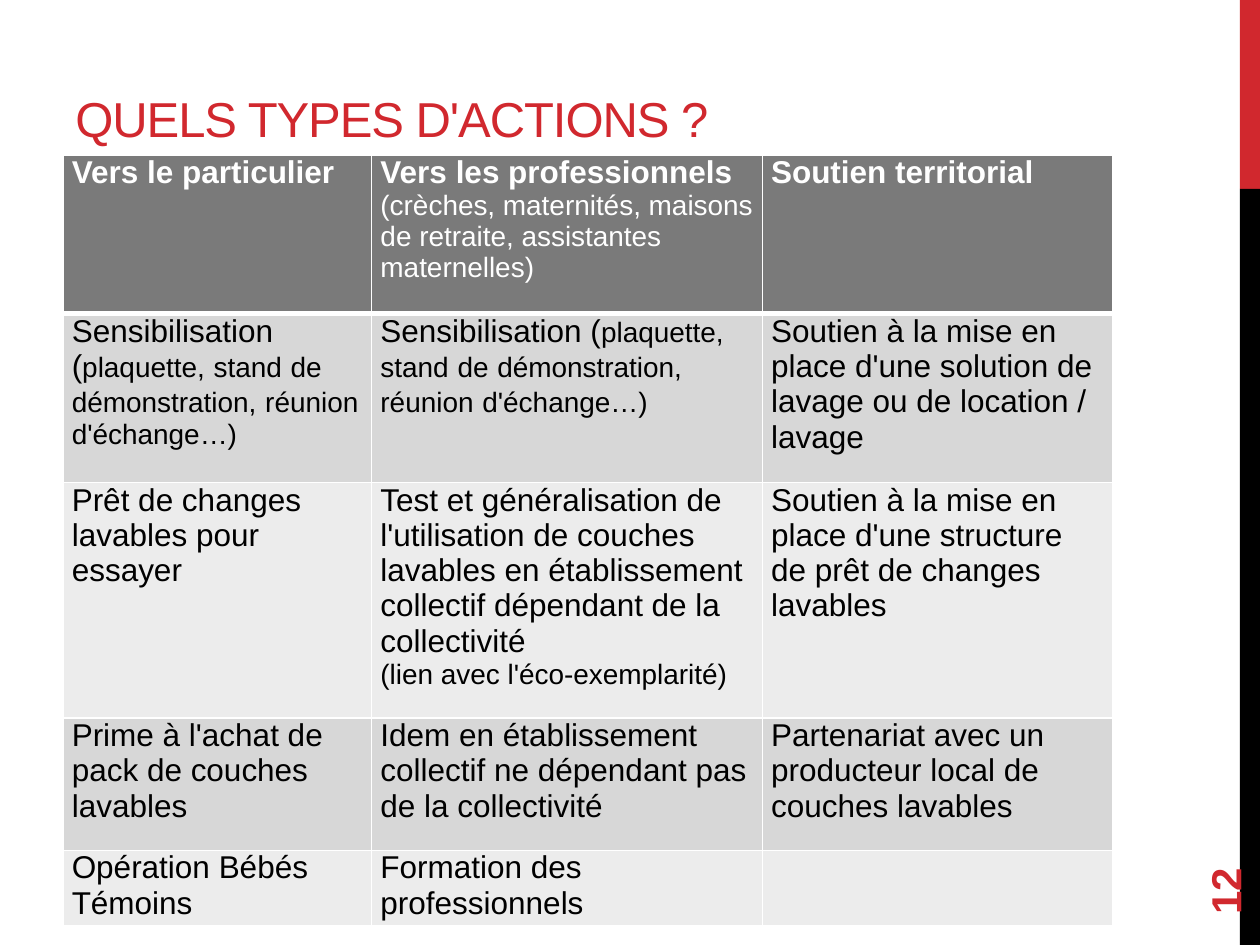
import pptx
import pptx.dml.color
import pptx.enum.shapes
import pptx.enum.text
import pptx.oxml.ns
import pptx.util
from lxml import etree
from pptx.util import Inches

COLORS = {
    "red": "D1282E", "black": "000000", "white": "FFFFFF",
    "header": "7A7A7A", "dark_band": "D7D7D7", "light_band": "ECECEC",
}
FONT = "Arial"
COLUMNS = [2.45, 3.1, 2.78]
ROWS = [1.26, 1.34, 1.87, 1.05, 0.55]


def rgb(name):
    return pptx.dml.color.RGBColor.from_string(COLORS[name])


def add_run(p, text, size=18, color="black", bold=False, spacing=None):
    r = p.add_run()
    r.text = text
    r.font.name = FONT
    r.font.size = pptx.util.Pt(size)
    r.font.bold = bold
    r.font.color.rgb = rgb(color)
    if spacing is not None:
        r._r.get_or_add_rPr().set("spc", str(round(spacing * 100)))


def add_text(s, box, text, anchor, bottom=0.05, rotation=0, **font):
    sp = s.shapes.add_textbox(*map(Inches, box))
    sp.rotation = rotation
    tf = sp.text_frame
    tf.word_wrap = True
    tf.vertical_anchor = anchor
    tf.margin_bottom = Inches(bottom)
    add_run(tf.paragraphs[0], text, **font)


def add_side_band(s, left, top, width, height):
    split = height / 5
    for y, h, color in [(top, split, "red"), (top + split, height - split, "black")]:
        sp = s.shapes.add_shape(pptx.enum.shapes.MSO_SHAPE.RECTANGLE,
                                *map(Inches, (left, y, width, h)))
        sp.shadow.inherit = False
        sp.fill.solid()
        sp.fill.fore_color.rgb = rgb(color)
        sp.line.fill.background()


def set_borders(cell, widths):
    tcPr = cell._tc.get_or_add_tcPr()
    qn = pptx.oxml.ns.qn
    for side, width in zip("LRTB", widths):
        ln = etree.SubElement(tcPr, qn(f"a:ln{side}"), w=str(pptx.util.Pt(width)))
        fill = etree.SubElement(ln, qn("a:solidFill"))
        etree.SubElement(fill, qn("a:srgbClr"), val=COLORS["white"])


def awareness_runs():
    words = "plaquette, stand de démonstration, réunion d'échange…)".split()
    runs = [("Sensibilisation (", 18)]
    for i, word in enumerate(words):
        if i:
            runs.append((" ", 18))
        runs.append((word, 16))
    return runs


def table_content():
    return [
        ["Vers le particulier",
         [("Vers les professionnels ", 18),
          ("(crèches, maternités, maisons de retraite, assistantes maternelles)", 16)],
         "Soutien territorial"],
        [awareness_runs(), awareness_runs(),
         "Soutien à la mise en place d'une solution de lavage ou de location / lavage"],
        ["Prêt de changes lavables pour essayer",
         [("Test et généralisation de l'utilisation de couches lavables en "
           "établissement collectif dépendant de la collectivité\v", 18),
          ("(lien avec l'éco-exemplarité)", 16)],
         "Soutien à la mise en place d'une structure de prêt de changes lavables"],
        ["Prime à l'achat de pack de couches lavables",
         "Idem en établissement collectif ne dépendant pas de la collectivité",
         "Partenariat avec un producteur local de couches lavables"],
        ["Opération Bébés Témoins", "Formation des professionnels", ""],
    ]


def fill_cell(cell, content, row):
    header = row == 0
    cell.margin_left = cell.margin_right = Inches(0.07)
    cell.margin_top = cell.margin_bottom = 0
    set_borders(cell, [1, 1, 3 if row == 1 else 1, 3 if header else 1])
    cell.fill.solid()
    band = "header" if header else "dark_band" if row % 2 else "light_band"
    cell.fill.fore_color.rgb = rgb(band)
    runs = [(content, 18)] if isinstance(content, str) else content
    p = cell.text_frame.paragraphs[0]
    for text, size in runs:
        lines = text.split("\v")
        for i, line in enumerate(lines):
            if i:
                p.add_line_break()
            if line:
                add_run(p, line, size=size, color="white" if header else "black",
                        bold=header and size == 18)


def add_actions_table(s, left, top, width, height):
    table = s.shapes.add_table(len(ROWS), len(COLUMNS),
                               *map(Inches, (left, top, width, height))).table
    for column, w in zip(table.columns, COLUMNS):
        column.width = Inches(w)
    for row, h in zip(table.rows, ROWS):
        row.height = Inches(h)
    for i, row in enumerate(table_content()):
        for j, content in enumerate(row):
            fill_cell(table.cell(i, j), content, i)


def main():
    prs = pptx.Presentation()
    prs.slide_width, prs.slide_height = Inches(10), Inches(7.5)
    s = prs.slides.add_slide(prs.slide_layouts[6])
    anchor = pptx.enum.text.MSO_ANCHOR
    add_side_band(s, 9.84, 0, 0.16, 7.5)
    add_text(s, (0.5, 0.17, 8.36, 1.5), "QUELS TYPES D'ACTIONS ?", anchor.BOTTOM,
             bottom=0.5, size=28, color="red", spacing=-0.6)
    add_actions_table(s, 0.5, 1.23, sum(COLUMNS), sum(ROWS))
    add_text(s, (9, 6.44, 1.44, 0.4), "12", anchor.MIDDLE, rotation=270,
             size=24, color="red", bold=True)
    prs.save("out.pptx")


if __name__ == "__main__":
    main()
